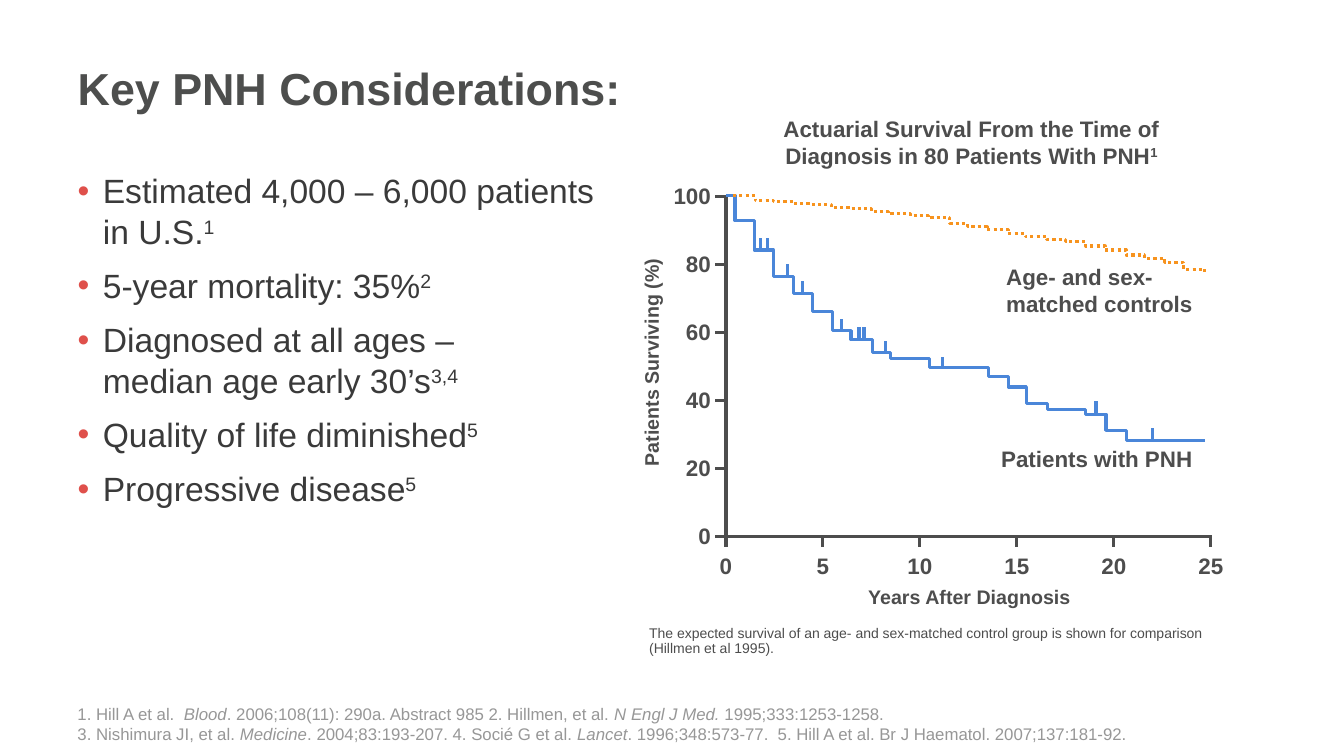
from dataclasses import dataclass

from lxml import etree
from pptx import Presentation
from pptx.dml.color import RGBColor
from pptx.enum.dml import MSO_LINE
from pptx.enum.shapes import MSO_CONNECTOR
from pptx.enum.text import MSO_ANCHOR, MSO_AUTO_SIZE, PP_ALIGN
from pptx.oxml.ns import qn
from pptx.util import Inches, Pt

LEFT, CENTER, RIGHT = PP_ALIGN.LEFT, PP_ALIGN.CENTER, PP_ALIGN.RIGHT
TOP, MIDDLE, BOTTOM = MSO_ANCHOR.TOP, MSO_ANCHOR.MIDDLE, MSO_ANCHOR.BOTTOM
FIT, FIXED = MSO_AUTO_SIZE.SHAPE_TO_FIT_TEXT, MSO_AUTO_SIZE.NONE
STRAIGHT = MSO_CONNECTOR.STRAIGHT
DOTTED = MSO_LINE.ROUND_DOT


@dataclass(frozen=True)
class Theme:
    font: str = "Arial"
    head: str = "4D4E4D"
    body: str = "3A3A3A"
    bullet: str = "DF504B"
    cite: str = "979797"
    axis: str = "4D4D4D"
    blue: str = "4A86D9"
    orange: str = "F7931E"
    title_size: int = 32
    body_size: int = 24
    label_size: int = 16
    axis_size: int = 14
    cite_size: int = 12
    note_size: int = 10
    stroke: float = 2.25


THEME = Theme()

# Text is a list of (words, style); style is "" plain, "i" italic, "s" raised
BULLETS = [
    [("Estimated 4,000 – 6,000 patients in U.S.", ""), ("1", "s")],
    [("5-year mortality: 35%", ""), ("2", "s")],
    [("Diagnosed at all ages –\nmedian age early 30’s", ""), ("3,4", "s")],
    [("Quality of life diminished", ""), ("5", "s")],
    [("Progressive disease", ""), ("5", "s")],
]
CITES = [
    ("1. Hill A et al.  ", ""), ("Blood", "i"),
    (". 2006;108(11): 290a. Abstract 985 2. Hillmen, et al. ", ""),
    ("N Engl J Med. ", "i"),
    ("1995;333:1253-1258.\n3. Nishimura JI, et al. ", ""),
    ("Medicine", "i"), (". 2004;83:193-207. 4. Socié G et al. ", ""),
    ("Lancet", "i"),
    (". 1996;348:573-77.  5. Hill A et al. Br J Haematol. 2007;137:181-92.", ""),
]
NOTE = ("The expected survival of an age- and sex-matched control group "
        "is shown for comparison (Hillmen et al 1995).")

# Plot frame, and curves as (x, new level) steps, all in inches
X0, Y0, Y_TOP, X_GAP, Y_GAP, TICK = 7.2, 5.32, 1.95, 0.962, 0.674, 0.11
PNH = [(7.29, 2.19), (7.48, 2.48), (7.67, 2.74), (7.87, 2.91), (8.06, 3.09),
       (8.26, 3.28), (8.44, 3.37), (8.65, 3.5), (8.83, 3.56), (9.22, 3.65),
       (9.8, 3.74), (10, 3.84), (10.18, 4), (10.39, 4.06), (10.77, 4.11),
       (10.97, 4.27), (11.17, 4.37), (11.95, 4.37)]
CONTROLS = [(7.49, 1.99), (7.67, 2), (7.87, 2.02), (8.05, 2.03), (8.25, 2.06),
            (8.43, 2.07), (8.64, 2.1), (8.81, 2.12), (9.03, 2.14), (9.21, 2.16),
            (9.42, 2.22), (9.6, 2.25), (9.79, 2.28), (10, 2.32), (10.17, 2.35),
            (10.38, 2.38), (10.57, 2.4), (10.77, 2.44), (10.96, 2.48),
            (11.17, 2.53), (11.35, 2.56), (11.55, 2.6), (11.74, 2.67),
            (11.95, 2.73)]
CENSORED = [(7.54, 2.48), (7.61, 2.48), (7.81, 2.74), (7.96, 2.91),
            (8.35, 3.28), (8.52, 3.36), (8.57, 3.36), (8.78, 3.5),
            (9.35, 3.66), (10.87, 4.1), (11.43, 4.37)]


def apply(target, values):
    for name, value in values.items():
        setattr(target, name, value)


def place(shape, box):
    names = ("left", "top", "width", "height")
    apply(shape, dict(zip(names, map(Inches, box))))


def write(para, parts, size, color, bold=False):
    for words, style in parts:
        for row, line in enumerate(words.split("\n")):
            if row:
                para.add_line_break()
            run = para.add_run()
            run.text = line
            apply(run.font, {"name": THEME.font, "size": Pt(size),
                             "bold": bold, "italic": style == "i"})
            run.font.color.rgb = RGBColor.from_string(color)
            if style == "s":
                run.font._element.set("baseline", "30000")


def add_bullet(para):
    props = para._p.get_or_add_pPr()
    props.set("marL", str(Inches(0.25)))
    props.set("indent", str(Inches(-0.25)))
    tint = etree.SubElement(props, qn("a:buClr"))
    etree.SubElement(tint, qn("a:srgbClr")).set("val", THEME.bullet)
    etree.SubElement(props, qn("a:buFont")).set("typeface", THEME.font)
    etree.SubElement(props, qn("a:buChar")).set("char", "•")


def add_label(shapes, parts, box, size=THEME.label_size, align=LEFT):
    label = shapes.add_textbox(*map(Inches, box))
    frame = label.text_frame
    apply(frame, {"margin_left": 0, "margin_right": 0, "margin_top": 0,
                  "margin_bottom": 0, "word_wrap": False, "auto_size": FIT})
    frame.paragraphs[0].alignment = align
    write(frame.paragraphs[0], parts, size, THEME.axis, True)
    return label


def add_para(shapes, parts, box, size, color, spacing=None):
    frame = shapes.add_textbox(*map(Inches, box)).text_frame
    apply(frame, {"word_wrap": True, "vertical_anchor": BOTTOM})
    frame.paragraphs[0].line_spacing = spacing
    write(frame.paragraphs[0], parts, size, color)


def set_line(shape, color):
    shape.line.color.rgb = RGBColor.from_string(color)
    shape.line.width = Pt(THEME.stroke)


def add_tick(shapes, x, y, dx, dy, color):
    tick = shapes.add_connector(STRAIGHT, *map(Inches, (x, y, x + dx, y + dy)))
    set_line(tick, color)
    etree.SubElement(tick.element.spPr, qn("a:effectLst"))


def add_path(shapes, points, color):
    spots = [(Inches(x), Inches(y)) for x, y in points]
    pen = shapes.build_freeform(*spots[0])
    pen.add_line_segments(spots[1:], close=False)
    path = pen.convert_to_shape()
    path.fill.background()
    path.shadow.inherit = False
    set_line(path, color)
    return path


def add_curve(shapes, start, steps, color):
    points = [start]
    for x, y in steps:
        points += [(x, points[-1][1]), (x, y)]
    return add_path(shapes, points, color)


def add_plot(shapes):
    # Axes with their ticks and numbers
    add_path(shapes, [(X0, 1.93), (X0, Y0), (12.02, Y0)], THEME.axis)
    for i in range(6):
        x, y = X0 + i * X_GAP, Y_TOP + i * Y_GAP
        add_tick(shapes, X0, y, -TICK, 0, THEME.axis)
        add_tick(shapes, x, Y0, 0, TICK, THEME.axis)
        share, year = str(100 - 20 * i), str(5 * i)
        wide, slim = 0.133 * len(share), 0.133 * len(year)
        add_label(shapes, [(share, "")], (7.05 - wide, y - 0.14, wide, 0.27),
                  align=RIGHT)
        add_label(shapes, [(year, "")], (x - slim / 2, 5.48, slim, 0.27),
                  align=CENTER)

    # Survival curves and censoring marks
    add_curve(shapes, (X0, 1.94), PNH, THEME.blue)
    for x, y in CENSORED:
        add_tick(shapes, x, y, 0, -0.12, THEME.blue)
    add_curve(shapes, (7.27, 1.94), CONTROLS, THEME.orange).line.dash_style = DOTTED

    # Headings and curve names
    add_label(shapes, [("Years After Diagnosis", "")], (8.53, 5.8, 2.17, 0.24),
              THEME.axis_size, CENTER)
    side = add_label(shapes, [("Patients Surviving (%)", "")],
                     (5.43, 3.47, 2.07, 0.25), THEME.axis_size, CENTER)
    side.rotation = 270
    heading = "Actuarial Survival From the Time of\nDiagnosis in 80 Patients With PNH"
    add_label(shapes, [(heading, ""), ("1", "s")], (7.6, 1.14, 4.07, 0.54),
              align=CENTER)
    add_label(shapes, [("Age- and sex-\nmatched controls", "")],
              (9.98, 2.61, 2.01, 0.54))
    add_label(shapes, [("Patients with PNH", "")], (9.93, 4.42, 2.07, 0.27))
    add_para(shapes, [(NOTE, "")], (6.34, 6.16, 6.18, 0.4), THEME.note_size,
             THEME.axis, 0.9)


def main():
    deck = Presentation()
    apply(deck, {"slide_width": Inches(13.33), "slide_height": Inches(7.5)})
    slide = deck.slides.add_slide(deck.slide_layouts[1])

    # Title
    title = slide.shapes.title
    place(title, (0.67, 0.22, 11.75, 1.3))
    apply(title.text_frame, {"vertical_anchor": MIDDLE, "auto_size": FIXED})
    para = title.text_frame.paragraphs[0]
    para.alignment = LEFT
    write(para, [("Key PNH Considerations:", "")], THEME.title_size, THEME.head, True)

    # Bullet list
    body = slide.placeholders[1]
    place(body, (0.67, 1.64, 5.67, 5.12))
    frame = body.text_frame
    apply(frame, {"vertical_anchor": TOP, "auto_size": FIXED})
    for i, parts in enumerate(BULLETS):
        para = frame.add_paragraph() if i else frame.paragraphs[0]
        add_bullet(para)
        para.space_before = Pt(10 if i else 0)
        write(para, parts, THEME.body_size, THEME.body)

    # References and survival plot
    add_para(slide.shapes, CITES, (0.67, 6.95, 11.5, 0.48), THEME.cite_size, THEME.cite)
    add_plot(slide.shapes.add_group_shape().shapes)
    deck.save("out.pptx")


if __name__ == "__main__":
    main()
